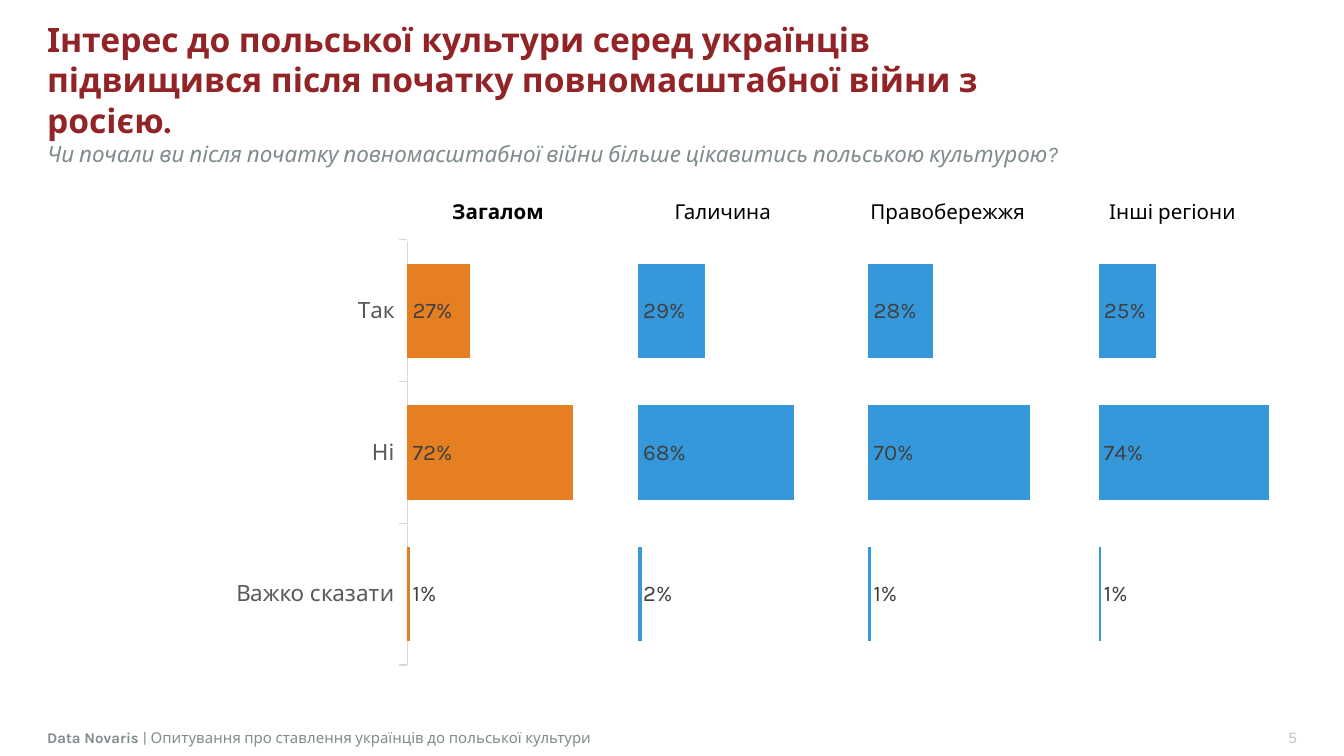
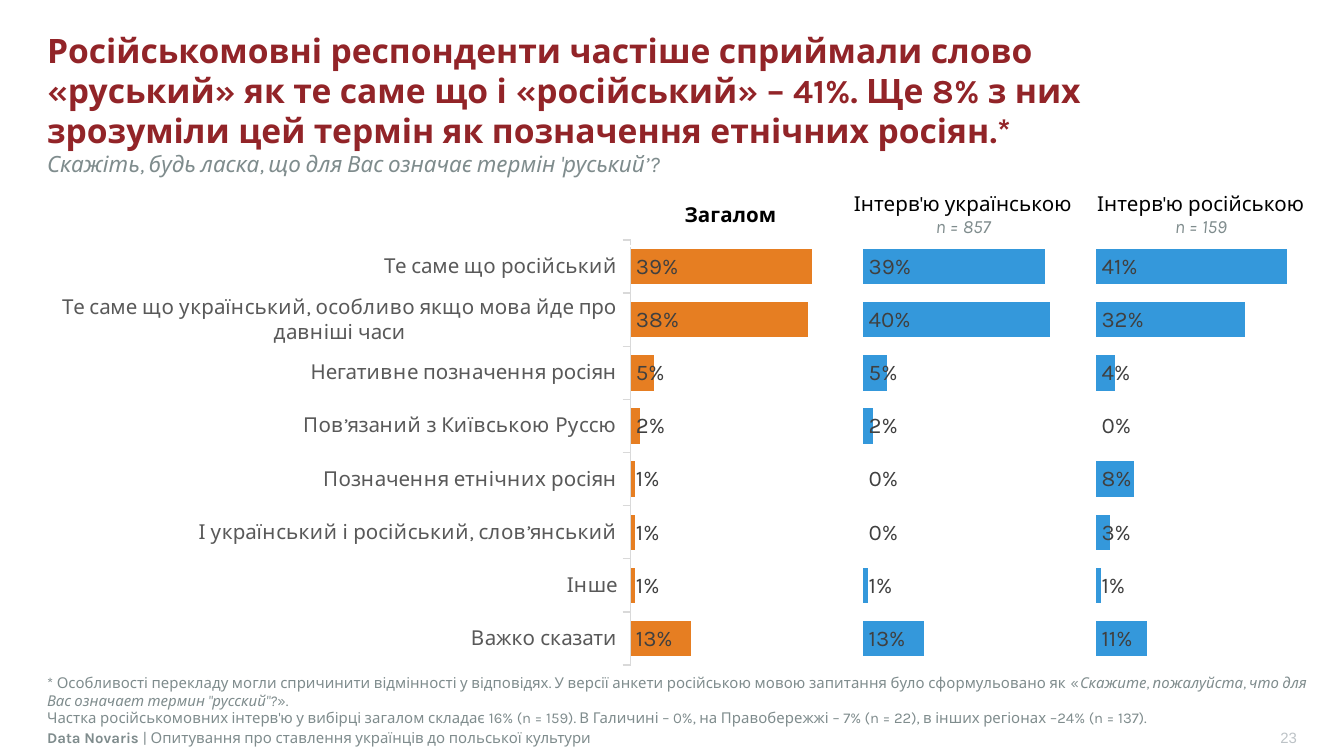
"""Builds two survey slides on Polish culture with bar charts."""
import pptx
import pptx.chart.data
import pptx.dml.color
import pptx.enum.chart
import pptx.enum.text
import pptx.oxml
import pptx.util
from pptx.util import Inches

TINT = {"red": "922428", "gray": "7F8C8D", "pale": "BDC3C7", "black": "000000",
        "white": "FFFFFF", "orange": "E67E22", "blue": "3498DB",
        "axis": "D9D9D9", "label": "595959", "value": "404040"}
STYLE = {
    "title": ("Karla", 18, "red", True, False),
    "ask": ("Karla", 12, "gray", False, True),
    "total": ("Karla", 11, "black", True, False),
    "head": ("Karla", 11, "black", False, False),
    "count": ("Karla", 10, "gray", False, True),
    "note": ("Karla", 8, "gray", False, False),
    "quote": ("Karla", 8, "gray", False, True),
    "firm": ("Karla", 8, "gray", True, False),
    "page": ("Arial", 8, "pale", False, False),
    "value": ("Karla", 12, "value", False, False),
}
LEFT, MID, RIGHT = (pptx.enum.text.PP_ALIGN.LEFT, pptx.enum.text.PP_ALIGN.CENTER,
                    pptx.enum.text.PP_ALIGN.RIGHT)
TOP, CENTER = pptx.enum.text.MSO_ANCHOR.TOP, pptx.enum.text.MSO_ANCHOR.MIDDLE
FOOT = [("Data Novaris ", "firm"),
        ("| Опитування про ставлення українців до польської культури", "note")]

SLIDES = [
    {
        "page": "5",
        "title": "Інтерес до польської культури серед українців підвищився після початку "
                 "повномасштабної війни з росією.",
        "ask": "Чи почали ви після початку повномасштабної війни більше цікавитись "
               "польською культурою?",
        "place": (0.35, 0.53, 7.72, 0.32),
        "cats": ["Так", "Ні", "Важко сказати"],
        "size": 12,
        "plot": 0.298,
        "full": 1,
        "groups": [[0.27, 0.72, 0.01], [0.29, 0.68, 0.02],
                   [0.28, 0.7, 0.01], [0.25, 0.74, 0.01]],
        "left": 2.87,
        "cols": [6.69 / 4] * 4,
        "high": 0.41,
        "heads": [["Загалом"], ["Галичина"], ["Правобережжя"], ["Інші регіони"]],
        "notes": [],
    },
    {
        "page": "23",
        "title": "Російськомовні респонденти частіше сприймали слово «руський» як те саме що "
                 "і «російський» – 41%. Ще 8% з них зрозуміли цей термін як позначення "
                 "етнічних росіян.*",
        "ask": "Скажіть, будь ласка, що для Вас означає термін 'руський’?",
        "place": (0.35, 0.61, 8.11, 0.32),
        "cats": ["Те саме що російський",
                 "Те саме що український, особливо якщо мова йде про давніші часи",
                 "Негативне позначення росіян", "Повʼязаний з Київською Руссю",
                 "Позначення етнічних росіян", "І український і російський, словʼянський",
                 "Інше", "Важко сказати"],
        "size": 11,
        "plot": 0.468,
        "full": 0.5,
        "groups": [[0.39, 0.38, 0.05, 0.02, 0.01, 0.01, 0.01, 0.13],
                   [0.39, 0.4, 0.05, 0.02, 0, 0, 0.01, 0.13],
                   [0.41, 0.32, 0.04, 0, 0.08, 0.03, 0.01, 0.11]],
        "left": 4.61,
        "cols": [1.65, 1.81, 1.73],
        "high": 0.45,
        "heads": [["Загалом"], ["Інтерв'ю українською", "n = 857"],
                  ["Інтерв'ю російською", "n = 159"]],
        "notes": [
            [("* Особливості перекладу могли спричинити відмінності у відповідях. У версії "
              "анкети російською мовою запитання було сформульовано як «", "note"),
             ("Скажите, пожалуйста, что для Вас означает термин \"русский\"?", "quote"),
             ("».", "note")],
            [("Частка російськомовних інтерв'ю у вибірці загалом складає 16% (n = 159). "
              "В Галичині – 0%, на Правобережжі – 7% (n = 22), в інших регіонах –24% "
              "(n = 137).", "note")]],
    },
]


def dress(font, style):
    name, size, tint, bold, slant = STYLE[style]
    font.name, font.size = name, pptx.util.Pt(size)
    font.bold, font.italic = bold, slant
    font.color.rgb = pptx.dml.color.RGBColor.from_string(TINT[tint])


def write(frame, lines, align):
    for i, line in enumerate(lines):
        para = frame.add_paragraph() if i else frame.paragraphs[0]
        para.alignment = align
        for text, style in line:
            if text == "\n":
                para.add_line_break()
                continue
            run = para.add_run()
            run.text = text
            dress(para.font if len(line) == 1 else run.font, style)


deck = pptx.Presentation()
deck.slide_width, deck.slide_height = Inches(10), Inches(10 * 9 / 16)

for data in SLIDES:
    slide = deck.slides.add_slide(deck.slide_layouts[6])

    fill = pptx.chart.data.CategoryChartData(number_format="0%")
    fill.categories = data["cats"]
    for i, group in enumerate(data["groups"]):
        fill.add_series(f"Series {2 * i + 1}", group)
        fill.add_series(f"Series {2 * i + 2}", [round(data["full"] - n, 2) for n in group])
    chart = slide.shapes.add_chart(
        pptx.enum.chart.XL_CHART_TYPE.BAR_STACKED_100, Inches(0.12), Inches(1.32),
        Inches(9.77), Inches(4.02), fill).chart
    chart.has_legend = chart.has_title = False
    dress(chart.font, "value")

    plot = chart.plots[0]
    plot.gap_width, plot.overlap, plot.vary_by_categories = 50, 100, False
    for i, bars in enumerate(plot.series):
        if i % 2:
            bars.format.fill.background()
            continue
        bars.format.fill.solid()
        bars.format.fill.fore_color.rgb = pptx.dml.color.RGBColor.from_string(
            TINT["blue" if i else "orange"])
        bars.invert_if_negative = False
        marks = bars.data_labels
        marks.show_value = True
        marks.number_format, marks.number_format_is_linked = "0%", False
        marks.position = pptx.enum.chart.XL_LABEL_POSITION.INSIDE_BASE
        dress(marks.font, "value")

    axis = chart.category_axis
    axis.reverse_order = True
    axis.has_major_gridlines = False
    axis.major_tick_mark = pptx.enum.chart.XL_TICK_MARK.OUTSIDE
    axis.minor_tick_mark = pptx.enum.chart.XL_TICK_MARK.NONE
    axis.format.line.color.rgb = pptx.dml.color.RGBColor.from_string(TINT["axis"])
    axis.format.line.width = pptx.util.Pt(0.75)
    dress(axis.tick_labels.font, "value")
    axis.tick_labels.font.size = pptx.util.Pt(data["size"])
    axis.tick_labels.font.color.rgb = pptx.dml.color.RGBColor.from_string(TINT["label"])
    scale = chart.value_axis
    scale.minimum_scale, scale.maximum_scale = 0, 1
    scale.has_major_gridlines = scale.visible = False

    area = chart.element.find(".//{*}plotArea")
    for old in area.findall("{*}layout"):
        area.remove(old)
    sides = {"x": data["plot"], "y": 0.116, "w": 1 - data["plot"], "h": 0.787}
    parts = "".join(f'<c:{k}Mode val="edge"/>' for k in "xy")
    parts += "".join(f'<c:{k} val="{n:.3f}"/>' for k, n in sides.items())
    area.insert(0, pptx.oxml.parse_xml(
        '<c:layout xmlns:c="http://schemas.openxmlformats.org/drawingml/2006/chart">'
        f'<c:manualLayout><c:layoutTarget val="inner"/>{parts}</c:manualLayout></c:layout>'))

    table = slide.shapes.add_table(
        1, len(data["cols"]), Inches(data["left"]), Inches(1.38),
        Inches(sum(data["cols"])), Inches(data["high"])).table
    table.first_row = table.horz_banding = False
    for i, (wide, words) in enumerate(zip(data["cols"], data["heads"])):
        table.columns[i].width = Inches(wide)
        cell = table.cell(0, i)
        cell.fill.background()
        cell.vertical_anchor = CENTER
        cell.margin_left = cell.margin_right = Inches(0.05)
        cell.margin_top = cell.margin_bottom = Inches(0.05)
        looks = ["head" if i else "total", "count"]
        write(cell.text_frame, [[pair] for pair in zip(words, looks)], MID)

    title = [(data["title"], "title"), ("\n", ""), (data["ask"], "ask")]
    boxes = [(data["place"], [title], LEFT, CENTER, False),
             ((0.35, 5.41, 7.72, 0.16), [FOOT], LEFT, CENTER, True),
             ((8.23, 5.41, 1.42, 0.16), [[(data["page"], "page")]], RIGHT, CENTER, True)]
    if data["notes"]:
        boxes.append(((0.35, 5.01, 9.45, 0.4), data["notes"], LEFT, TOP, False))
    for place, lines, align, anchor, solid in boxes:
        box = slide.shapes.add_textbox(*map(Inches, place))
        if solid:
            box.fill.solid()
            box.fill.fore_color.rgb = pptx.dml.color.RGBColor.from_string(TINT["white"])
        frame = box.text_frame
        frame.word_wrap, frame.vertical_anchor = True, anchor
        frame.margin_left = frame.margin_right = 0
        frame.margin_top = frame.margin_bottom = 0
        write(frame, lines, align)

deck.save("out.pptx")
